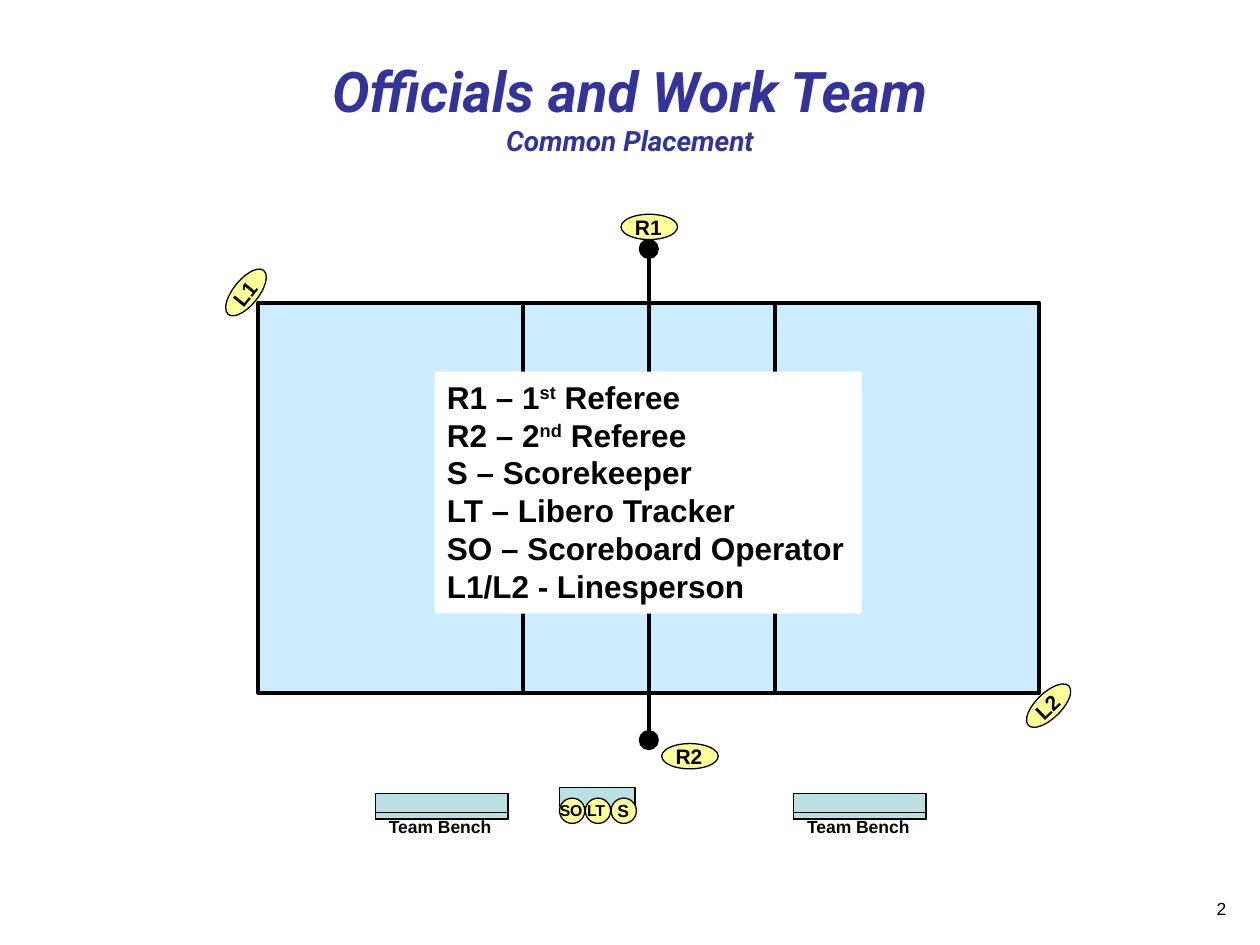
"""Build a slide showing where officials and the work team stand around a volleyball court."""
from dataclasses import dataclass

import pptx
import pptx.dml.color
import pptx.enum.shapes
import pptx.enum.text
import pptx.oxml
import pptx.util

Cm = pptx.util.Cm
Pt = pptx.util.Pt
RGBColor = pptx.dml.color.RGBColor
Shapes = pptx.enum.shapes.MSO_SHAPE
Align = pptx.enum.text.PP_ALIGN

BLACK = RGBColor(0x00, 0x00, 0x00)
WHITE = RGBColor(0xFF, 0xFF, 0xFF)
NAVY = RGBColor(0x33, 0x33, 0x99)
COURT_BLUE = RGBColor(0xCC, 0xEC, 0xFF)
BENCH_TEAL = RGBColor(0xBB, 0xE0, 0xE3)
OFFICIAL_YELLOW = RGBColor(0xFF, 0xFF, 0x99)

THIN, THICK = 0.75, 2.25
COURT_LEFT, COURT_TOP, HALF_SIDE = 5.21, 6.1, 7.87
NET_X = COURT_LEFT + HALF_SIDE
COURT_BOTTOM = COURT_TOP + HALF_SIDE
ATTACK_DISTANCE = 2.54
POST_SIZE = 0.38
BENCH_TOP, BENCH_WIDTH, BENCH_HEIGHT = 16, 2.67, 0.51

TITLE = {"name": "Roboto", "size": Pt(32), "bold": True, "italic": True}
SUBTITLE = {**TITLE, "size": Pt(16)}
LABEL = {"name": "Arial", "size": Pt(12), "bold": True}
LEGEND = {**LABEL, "size": Pt(18)}
PAGE_NUMBER = {"name": "Arial", "size": Pt(10), "bold": False}


@dataclass(frozen=True)
class Box:
    """A rectangle in centimetres."""
    left: float
    top: float
    width: float
    height: float

    def lengths(self) -> list:
        """Return the four values as lengths."""
        return [Cm(value) for value in (self.left, self.top, self.width, self.height)]

    def centred(self, width: float, height: float) -> "Box":
        """Return a box of another size with the same centre."""
        return Box(self.left + (self.width - width) / 2,
                   self.top + (self.height - height) / 2, width, height)


@dataclass(frozen=True)
class Official:
    """A marker for one official, with the size of its label."""
    name: str
    box: Box
    label_width: float = 1.08
    label_height: float = 0.76
    size: float = 12
    rotation: float = 0


REFEREES = [
    Official("R2", Box(13.34, 14.99, 1.14, 0.51)),
    Official("L1", Box(4.39, 5.64, 1.14, 0.51), rotation=308.9),
    Official("L2", Box(20.57, 13.97, 1.14, 0.51), rotation=315.8),
    Official("R1", Box(12.52, 4.32, 1.14, 0.51)),
]
SCORERS = [
    Official("S", Box(12.32, 16.09, 0.51, 0.51), 0.76, 0.69, 10),
    Official("LT", Box(11.8, 16.09, 0.51, 0.51), 0.94, 0.64, 9),
    Official("SO", Box(11.28, 16.09, 0.51, 0.51), 1, 0.64, 9),
]
LEGEND_LINES = [
    [("R1 – 1", False), ("st", True), (" Referee", False)],
    [("R2 – 2", False), ("nd", True), (" Referee", False)],
    [("S – Scorekeeper", False)],
    [("LT – Libero Tracker\vSO – Scoreboard Operator", False)],
    [("L1/L2 - Linesperson", False)],
]


def add_figure(shapes, kind, box: Box, fill: RGBColor, weight: float):
    """Add a filled shape, without outline when the weight is zero."""
    shape = shapes.add_shape(kind, *box.lengths())
    shape.shadow.inherit = False
    shape.fill.solid()
    shape.fill.fore_color.rgb = fill
    if weight:
        shape.line.color.rgb = BLACK
        shape.line.width = Pt(weight)
    else:
        shape.line.fill.background()
    return shape


def add_vertical(shapes, x: float, top: float, bottom: float) -> None:
    """Add a thick vertical court line."""
    line = shapes.add_connector(pptx.enum.shapes.MSO_CONNECTOR.STRAIGHT,
                                Cm(x), Cm(top), Cm(x), Cm(bottom))
    line.line.color.rgb = BLACK
    line.line.width = Pt(THICK)
    line._element.spPr.append(pptx.oxml.parse_xml(
        '<a:effectLst xmlns:a="http://schemas.openxmlformats.org/drawingml/2006/main"/>'))


def add_run(paragraph, text: str, style: dict, colour: RGBColor = BLACK):
    """Add formatted text to a paragraph, breaking lines at vertical tabs."""
    for index, line in enumerate(text.split("\v")):
        if index:
            paragraph.add_line_break()
        run = paragraph.add_run()
        run.text = line
        for attribute, value in style.items():
            setattr(run.font, attribute, value)
        run.font.color.rgb = colour
    return run


def add_text(shapes, box: Box, text: str, style: dict, rotation: float = 0) -> None:
    """Add an unwrapped label."""
    shape = shapes.add_textbox(*box.lengths())
    shape.rotation = rotation
    shape.text_frame.word_wrap = False
    shape.text_frame.auto_size = pptx.enum.text.MSO_AUTO_SIZE.SHAPE_TO_FIT_TEXT
    add_run(shape.text_frame.paragraphs[0], text, style)


def add_official(shapes, official: Official) -> None:
    """Add the oval and label of one official."""
    oval = add_figure(shapes, Shapes.OVAL, official.box, OFFICIAL_YELLOW, THIN)
    oval.rotation = official.rotation
    add_text(shapes, official.box.centred(official.label_width, official.label_height),
             official.name, {**LABEL, "size": Pt(official.size)}, official.rotation)


def add_wide_paragraph(shapes, box: Box, alignment):
    """Add a wrapping text box and return its aligned paragraph."""
    frame = shapes.add_textbox(*box.lengths()).text_frame
    frame.word_wrap = True
    frame.paragraphs[0].alignment = alignment
    return frame.paragraphs[0]


def add_court(slide) -> None:
    """Add both court halves, the posts and the net."""
    for left, attack_x in ((COURT_LEFT, NET_X - ATTACK_DISTANCE), (NET_X, NET_X + ATTACK_DISTANCE)):
        half = slide.shapes.add_group_shape().shapes
        add_figure(half, Shapes.RECTANGLE, Box(left, COURT_TOP, HALF_SIDE, HALF_SIDE),
                   COURT_BLUE, THICK)
        add_vertical(half, attack_x, COURT_TOP, COURT_BOTTOM)
    net = slide.shapes.add_group_shape().shapes
    for top in (4.83, 14.73):
        add_figure(net, Shapes.OVAL, Box(NET_X - POST_SIZE / 2, top, POST_SIZE, POST_SIZE),
                   BLACK, THIN)
    add_vertical(net, NET_X, 4.95, 14.86)


def add_bench(shapes, left: float) -> None:
    """Add a team bench with its label."""
    for top, height in ((BENCH_TOP, BENCH_HEIGHT), (16.38, 0.13)):
        add_figure(shapes, Shapes.RECTANGLE, Box(left, top, BENCH_WIDTH, height), BENCH_TEAL, THIN)
    add_text(shapes, Box(left + 0.02, 16.33, 2.63, 0.69), "Team Bench", {**LABEL, "size": Pt(10)})


def add_legend(slide) -> None:
    """Add the key to the abbreviations."""
    legend = add_figure(slide.shapes, Shapes.RECTANGLE, Box(8.76, 7.49, 8.61, 4.88), WHITE, 0)
    frame = legend.text_frame
    frame.word_wrap = False
    frame.vertical_anchor = pptx.enum.text.MSO_ANCHOR.TOP
    for index, pieces in enumerate(LEGEND_LINES):
        paragraph = frame.add_paragraph() if index else frame.paragraphs[0]
        paragraph.alignment = Align.LEFT
        for text, raised in pieces:
            run = add_run(paragraph, text, LEGEND)
            if raised:
                run.font._element.set("baseline", "30000")


def main() -> None:
    """Build and save the slide."""
    presentation = pptx.Presentation()
    presentation.slide_width, presentation.slide_height = Cm(25.4), Cm(19.05)
    slide = presentation.slides.add_slide(presentation.slide_layouts[6])
    add_run(add_wide_paragraph(slide.shapes, Box(23.7, 17.98, 1.27, 0.86), Align.RIGHT),
            "2", PAGE_NUMBER)
    title = add_wide_paragraph(slide.shapes, Box(0, 1.02, 25.4, 2.29), Align.CENTER)
    add_run(title, "Officials and Work Team", TITLE, NAVY)
    title.add_line_break()
    add_run(title, "Common Placement", SUBTITLE, NAVY)
    add_court(slide)
    for official in REFEREES:
        add_official(slide.shapes.add_group_shape().shapes, official)
    table = slide.shapes.add_group_shape().shapes
    add_figure(table, Shapes.RECTANGLE, Box(11.28, 15.88, 1.52, 0.38), BENCH_TEAL, THIN)
    for official in SCORERS:
        add_official(table, official)
    for left in (7.57, 16):
        add_bench(slide.shapes.add_group_shape().shapes, left)
    add_legend(slide)
    presentation.save("out.pptx")


if __name__ == "__main__":
    main()
